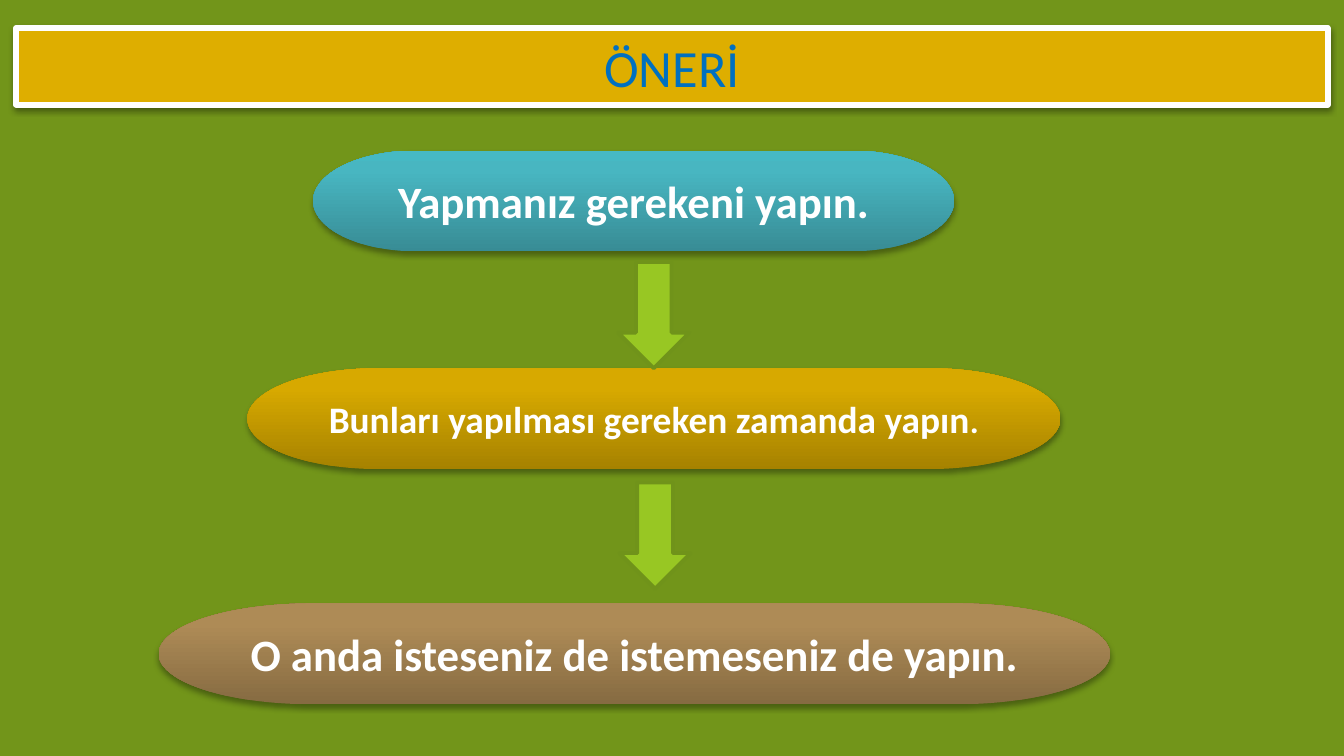
from pptx import Presentation
from pptx.dml.color import RGBColor
from pptx.enum import shapes, text
from pptx.oxml import parse_xml
from pptx.oxml.ns import nsdecls
from pptx.util import Inches, Pt

THEME = {
    "font": "Calibri",
    "background": "72951A",
    "banner": "DEAE00", "title": "0070C0", "title_size": 28,
    "white": "FFFFFF",
    "arrow": "98C723", "arrow_edge": "70931A",
    "teal": ("388C95", "48B6C1", "46B9C4"),
    "gold": ("A68200", "D7A900", "D8A900"),
    "brown": ("866B42", "AE8B56", "B08C54"),
}
SLIDE_WIDTH = 10
SLIDE_HEIGHT = SLIDE_WIDTH * 9 / 16
TITLE = "ÖNERİ"
# runs as (wording, size), left, top, width, gradient
STEPS = [
    ([("Yapmanız gerekeni yapın.", 24)], 2.33, 1.12, 4.77, "teal"),
    ([("Bunları yapılması gereken zamanda yapın", 20), (".", 18)],
     1.84, 2.74, 6.05, "gold"),
    ([("O anda isteseniz de istemeseniz de yapın.", 24)],
     1.18, 4.49, 7.08, "brown"),
]
STEP_HEIGHT = 0.75
ARROWS = [(4.6, 1.95), (4.61, 3.59)]
ARROW_SIZE = (0.53, 0.79)
GRADIENT_STOPS = (0, 80, 100)


def color(name):
    return RGBColor.from_string(THEME[name])


def add_block(slide, preset, left, top, width, height, fill=None):
    block = slide.shapes.add_shape(
        preset, *(Inches(n) for n in (left, top, width, height)))
    block.shadow.inherit = False
    if fill:
        block.fill.solid()
        block.fill.fore_color.rgb = color(fill)
    return block


def set_edge(block, name, width):
    block.line.color.rgb = color(name)
    block.line.width = Pt(width)


def cast_shadow(block, opacity, distance):
    effects = block._element.spPr.find("{*}effectLst")
    effects.append(parse_xml(
        f'<a:outerShdw {nsdecls("a")} blurRad="{Pt(3.1)}" dist="{Pt(distance)}" '
        f'dir="5400000" rotWithShape="0"><a:srgbClr val="000000">'
        f'<a:alpha val="{opacity * 1000}"/></a:srgbClr></a:outerShdw>'))


def fill_gradient(block, colors):
    """Blend three colours from the bottom edge to the top."""
    block.fill.gradient()
    gradient = block._element.spPr.find("{*}gradFill")
    stops = "".join(
        f'<a:gs pos="{stop * 1000}"><a:srgbClr val="{value}"/></a:gs>'
        for stop, value in zip(GRADIENT_STOPS, colors))
    gradient.getparent().replace(gradient, parse_xml(
        f'<a:gradFill {nsdecls("a")} rotWithShape="1"><a:gsLst>{stops}</a:gsLst>'
        f'<a:lin ang="16200000" scaled="0"/></a:gradFill>'))


def write(block, runs, font_color, bold, anchor):
    frame = block.text_frame
    frame.word_wrap = True
    frame.vertical_anchor = anchor
    line = frame.paragraphs[0]
    line.alignment = text.PP_ALIGN.CENTER
    line.font.name = THEME["font"]
    line.font.bold = bold
    line.font.color.rgb = color(font_color)
    line.font.size = Pt(runs[0][1])
    for wording, size in runs:
        run = line.add_run()
        run.text = wording
        if size != runs[0][1]:
            run.font.size = Pt(size)
    return line


def outline_text(run, name, width):
    run.font._element.insert(0, parse_xml(
        f'<a:ln {nsdecls("a")} w="{Pt(width)}"><a:solidFill>'
        f'<a:srgbClr val="{THEME[name]}"/></a:solidFill></a:ln>'))


def main():
    deck = Presentation()
    deck.slide_width = Inches(SLIDE_WIDTH)
    deck.slide_height = Inches(SLIDE_HEIGHT)
    slide = deck.slides.add_slide(deck.slide_layouts[6])
    slide.background.fill.solid()
    slide.background.fill.fore_color.rgb = color("background")
    preset = shapes.MSO_SHAPE

    banner = add_block(slide, preset.RECTANGLE, 0.12, 0.21, 9.76, 0.57, "banner")
    set_edge(banner, "white", 3)
    cast_shadow(banner, 38, 1.6)
    heading = write(banner, [(TITLE, THEME["title_size"])], "title", False,
                    text.MSO_ANCHOR.TOP)
    outline_text(heading.runs[0], "white", 1.45)

    for runs, left, top, width, gradient in STEPS:
        step = add_block(slide, preset.FLOWCHART_TERMINATOR,
                         left, top, width, STEP_HEIGHT)
        fill_gradient(step, THEME[gradient])
        step.line.fill.background()
        cast_shadow(step, 35, 1.8)
        write(step, runs, "white", True, text.MSO_ANCHOR.MIDDLE)

    for left, top in ARROWS:
        arrow = add_block(slide, preset.DOWN_ARROW, left, top, *ARROW_SIZE, "arrow")
        set_edge(arrow, "arrow_edge", 2)

    deck.save("out.pptx")


if __name__ == "__main__":
    main()
